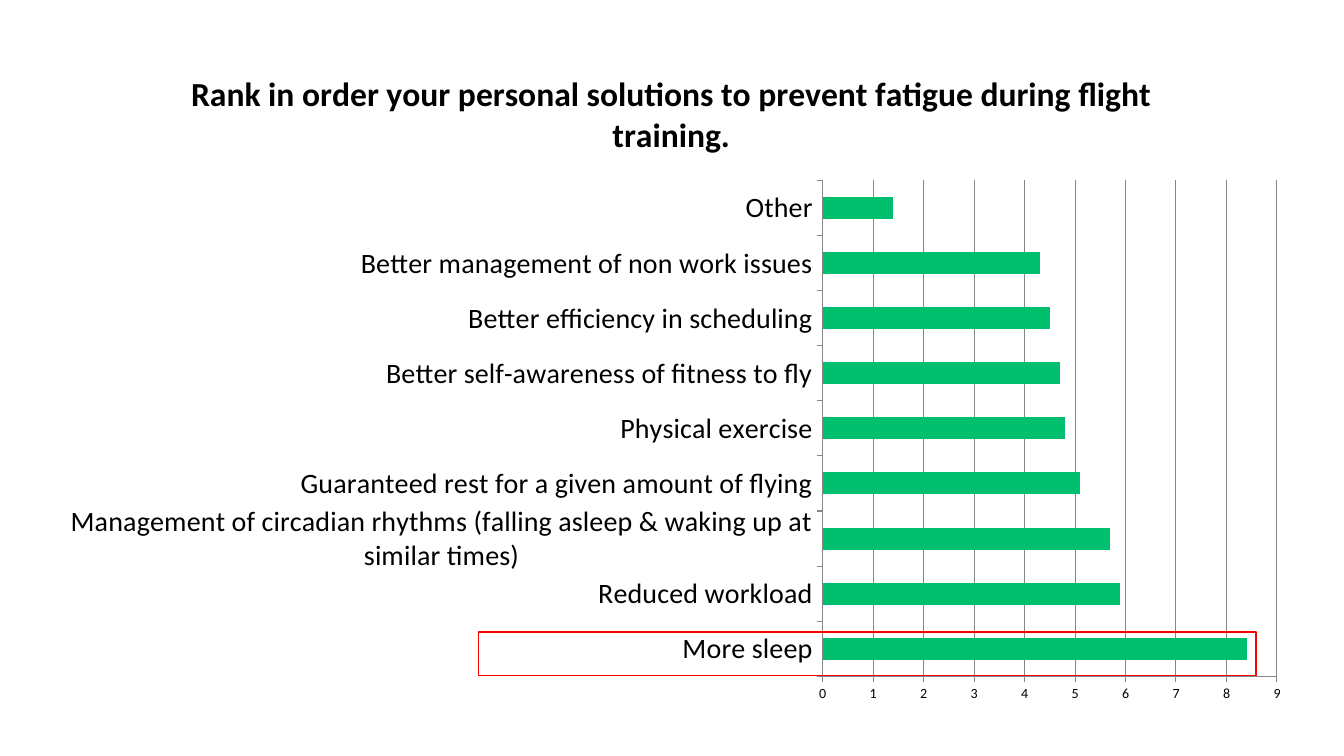
"""Build a slide ranking personal solutions to fatigue in flight training."""
import lxml.etree
import pptx
import pptx.chart.data
import pptx.dml.color
import pptx.enum.chart
import pptx.oxml
import pptx.util

Pt = pptx.util.Pt
RGB = pptx.dml.color.RGBColor.from_string

QUESTION = "Rank in order your personal solutions to prevent fatigue during flight training."
SOLUTIONS = [
    ("More sleep", 8.4),
    ("Reduced workload", 5.9),
    ("Management of circadian rhythms (falling asleep & waking up at similar times)", 5.7),
    ("Guaranteed rest for a given amount of flying", 5.1),
    ("Physical exercise", 4.8),
    ("Better self-awareness of fitness to fly", 4.7),
    ("Better efficiency in scheduling", 4.5),
    ("Better management of non work issues", 4.3),
    ("Other", 1.4),
]
THEME = {
    "font": "Calibri", "text": "000000", "bar": "00BF6F", "axis": "868686",
    "highlight": "FF0000", "title_size": 24, "label_size": 20, "tick_size": 10,
}
CHART_BOX = (28.8, 33.1, 901.4, 478.8)
HIGHLIGHT_BOX = (342, 451.4, 555.1, 31)
PLOT_BOX = {"x": 0.62, "y": 0.2, "w": 0.36, "h": 0.74}


def style_font(font, size, bold=False):
    font.name = THEME["font"]
    font.size = Pt(size)
    font.bold = bold
    font.color.rgb = RGB(THEME["text"])


def style_line(line, color, width):
    line.color.rgb = RGB(color)
    line.width = Pt(width)


def place_plot(chart):
    plot_area = chart.element.chart.plotArea
    for layout in plot_area.findall(pptx.oxml.ns.qn("c:layout")):
        plot_area.remove(layout)
    layout = lxml.etree.Element(pptx.oxml.ns.qn("c:layout"))
    manual = lxml.etree.SubElement(layout, pptx.oxml.ns.qn("c:manualLayout"))
    settings = {"layoutTarget": "inner", "xMode": "edge", "yMode": "edge", **PLOT_BOX}
    for tag, value in settings.items():
        lxml.etree.SubElement(manual, pptx.oxml.ns.qn(f"c:{tag}")).set("val", str(value))
    plot_area.insert(0, layout)


def add_ranking(slide):
    ranking = pptx.chart.data.CategoryChartData(number_format="General")
    ranking.categories = [solution for solution, score in SOLUTIONS]
    ranking.add_series("Series 1", [score for solution, score in SOLUTIONS])
    chart = slide.shapes.add_chart(
        pptx.enum.chart.XL_CHART_TYPE.BAR_CLUSTERED, *map(Pt, CHART_BOX), ranking
    ).chart
    style_font(chart.font, THEME["tick_size"])
    chart.has_legend = False
    chart.has_title = True
    question = chart.chart_title.text_frame.paragraphs[0].add_run()
    question.text = QUESTION
    style_font(question.font, THEME["title_size"], bold=True)

    bars = chart.plots[0]
    bars.gap_width = 150
    bars.vary_by_categories = False
    fill = bars.series[0].format.fill
    fill.solid()
    fill.fore_color.rgb = RGB(THEME["bar"])

    scores = chart.value_axis
    scores.minimum_scale, scores.maximum_scale, scores.major_unit = 0, 9, 1
    scores.has_major_gridlines = True
    style_line(scores.major_gridlines.format.line, THEME["axis"], 0.75)
    for axis, size in ((chart.category_axis, THEME["label_size"]), (scores, THEME["tick_size"])):
        axis.major_tick_mark = pptx.enum.chart.XL_TICK_MARK.OUTSIDE
        style_font(axis.tick_labels.font, size)
        style_line(axis.format.line, THEME["axis"], 0.75)
    place_plot(chart)


def add_highlight(slide):
    highlight = slide.shapes.add_shape(
        pptx.enum.shapes.MSO_SHAPE.RECTANGLE, *map(Pt, HIGHLIGHT_BOX)
    )
    highlight.shadow.inherit = False
    highlight.fill.background()
    style_line(highlight.line, THEME["highlight"], 1)


def main():
    deck = pptx.Presentation()
    deck.slide_width, deck.slide_height = Pt(960), Pt(540)
    slide = deck.slides.add_slide(deck.slide_layouts[6])
    add_ranking(slide)
    add_highlight(slide)
    deck.save("out.pptx")


if __name__ == "__main__":
    main()
